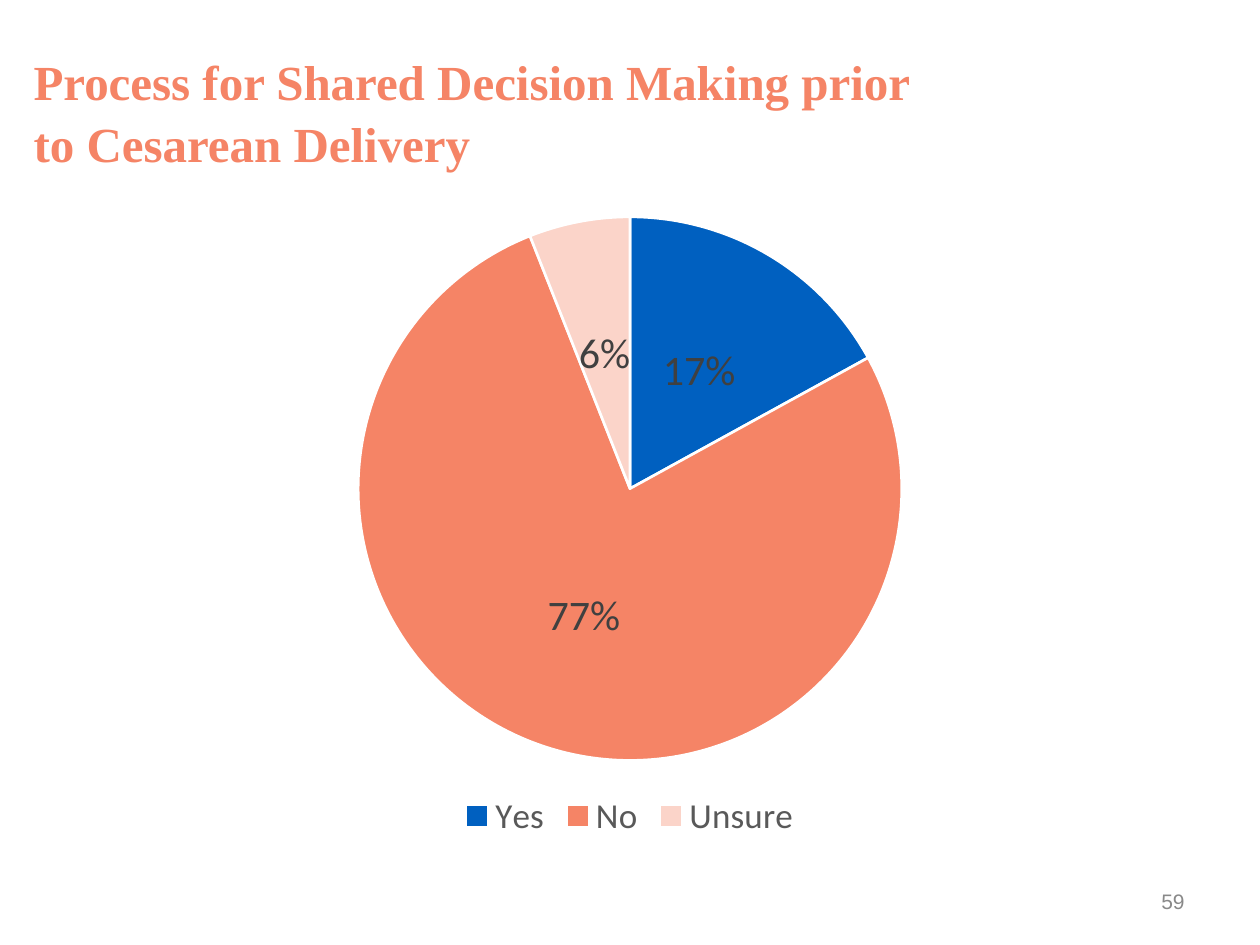
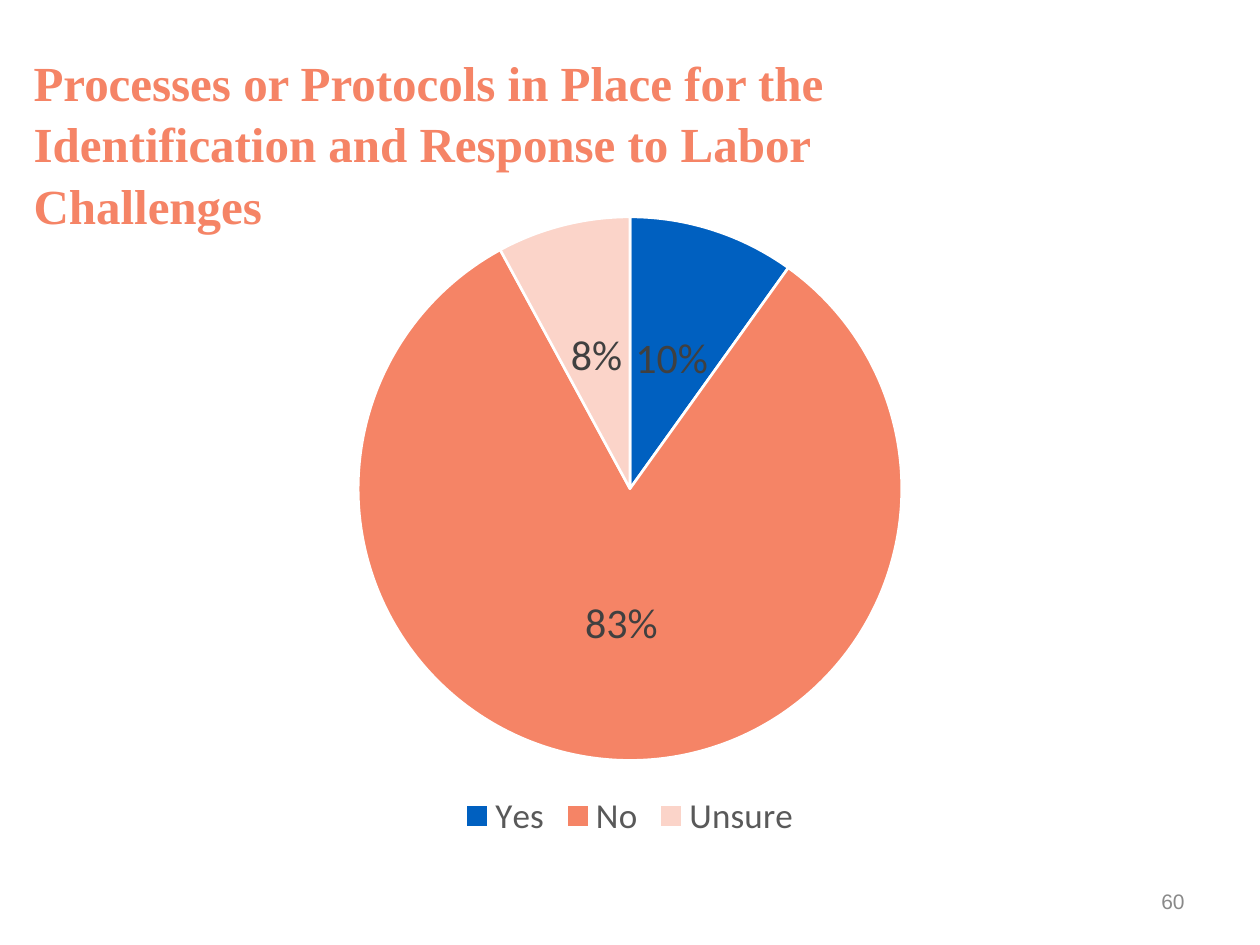
from pptx import Presentation
from pptx.chart.data import CategoryChartData
from pptx.dml.color import RGBColor
from pptx.enum.chart import XL_CHART_TYPE as ChartType
from pptx.enum.chart import XL_LABEL_POSITION as LabelPosition
from pptx.enum.chart import XL_LEGEND_POSITION as LegendPosition
from pptx.enum.text import MSO_ANCHOR as Anchor
from pptx.enum.text import PP_ALIGN as Align
from pptx.util import Pt

COLORS = {
    "coral": "F58466",
    "blue": "0060C0",
    "blush": "FBD4C9",
    "white": "FFFFFF",
    "black": "000000",
    "label": "404040",
    "legend": "595959",
    "number": "898989",
}
FONTS = {
    "title": {"name": "Times New Roman", "size": Pt(28), "bold": True, "color": "coral"},
    "chart": {"name": "Calibri", "size": Pt(10), "color": "black"},
    "label": {"name": "Calibri", "size": Pt(24), "color": "label"},
    "legend": {"name": "Calibri", "size": Pt(20), "color": "legend"},
    "number": {"name": "Arial", "size": Pt(12), "color": "number"},
}
ANSWER_COLORS = {"Yes": "blue", "No": "coral", "Unsure": "blush"}
FIRST_NUMBER = 59
SURVEY_SLIDES = [
    {
        "title": "Process for Shared Decision Making prior to Cesarean Delivery",
        "title_top": 18,
        "percentages": (17, 77, 6),
    },
    {
        "title": "Processes or Protocols in Place for the Identification "
                 "and Response to Labor Challenges",
        "title_top": 36,
        "percentages": (10, 83, 8),
    },
]


def rgb(name):
    return RGBColor.from_string(COLORS[name])


def format_font(font, style):
    for attribute, value in FONTS[style].items():
        if attribute == "color":
            font.color.rgb = rgb(value)
        else:
            setattr(font, attribute, value)


def write_text(shape, text, style, alignment):
    frame = shape.text_frame
    frame.word_wrap = True
    frame.vertical_anchor = Anchor.MIDDLE
    paragraph = frame.paragraphs[0]
    paragraph.alignment = alignment
    run = paragraph.add_run()
    run.text = text
    format_font(run.font, style)
    return paragraph


def add_title(slide, text, top):
    title = slide.shapes.title
    box = {"left": 12, "top": top, "width": 516.5, "height": 90}
    for attribute, points in box.items():
        setattr(title, attribute, Pt(points))
    paragraph = write_text(title, text, "title", Align.LEFT)
    paragraph.line_spacing = 1.05


def add_answer_pie(slide, percentages):
    data = CategoryChartData()
    data.categories = list(ANSWER_COLORS)
    data.add_series("Series 1", percentages)
    chart = slide.shapes.add_chart(
        ChartType.PIE, Pt(36), Pt(114), Pt(648), Pt(368.5), data
    ).chart
    chart.has_title = False
    format_font(chart.font, "chart")

    chart.has_legend = True
    chart.legend.position = LegendPosition.BOTTOM
    chart.legend.include_in_layout = False
    format_font(chart.legend.font, "legend")

    plot = chart.plots[0]
    plot.vary_by_categories = True
    series = plot.series[0]
    for index, color in enumerate(ANSWER_COLORS.values()):
        point_format = series.points[index].format
        point_format.fill.solid()
        point_format.fill.fore_color.rgb = rgb(color)
        point_format.line.color.rgb = rgb("white")
        point_format.line.width = Pt(1.5)

    # The rounded answers may not add up to 100, so they are shown as values.
    labels = series.data_labels
    label_format = {
        "show_value": True,
        "number_format": '0"%"',
        "number_format_is_linked": False,
        "position": LabelPosition.CENTER,
    }
    for attribute, value in label_format.items():
        setattr(labels, attribute, value)
    format_font(labels.font, "label")


def add_slide_number(slide, number):
    box = slide.shapes.add_textbox(Pt(516), Pt(500.5), Pt(168), Pt(29))
    write_text(box, str(number), "number", Align.RIGHT)


def main():
    presentation = Presentation()
    presentation.slide_width = Pt(720)
    presentation.slide_height = Pt(540)
    title_only = presentation.slide_layouts.get_by_name("Title Only")
    for number, survey in enumerate(SURVEY_SLIDES, FIRST_NUMBER):
        slide = presentation.slides.add_slide(title_only)
        add_title(slide, survey["title"], survey["title_top"])
        add_answer_pie(slide, survey["percentages"])
        add_slide_number(slide, number)
    presentation.save("out.pptx")


if __name__ == "__main__":
    main()
